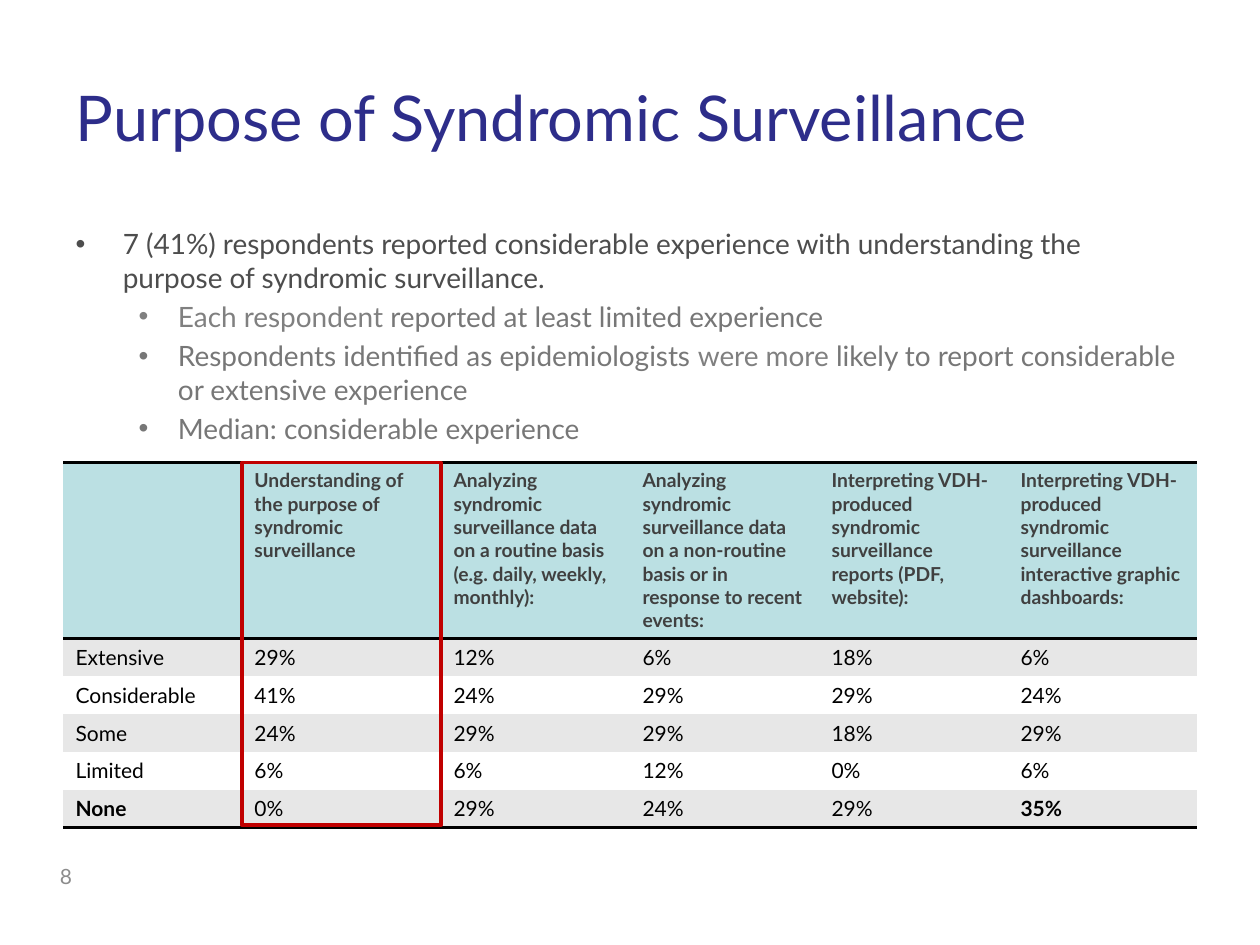
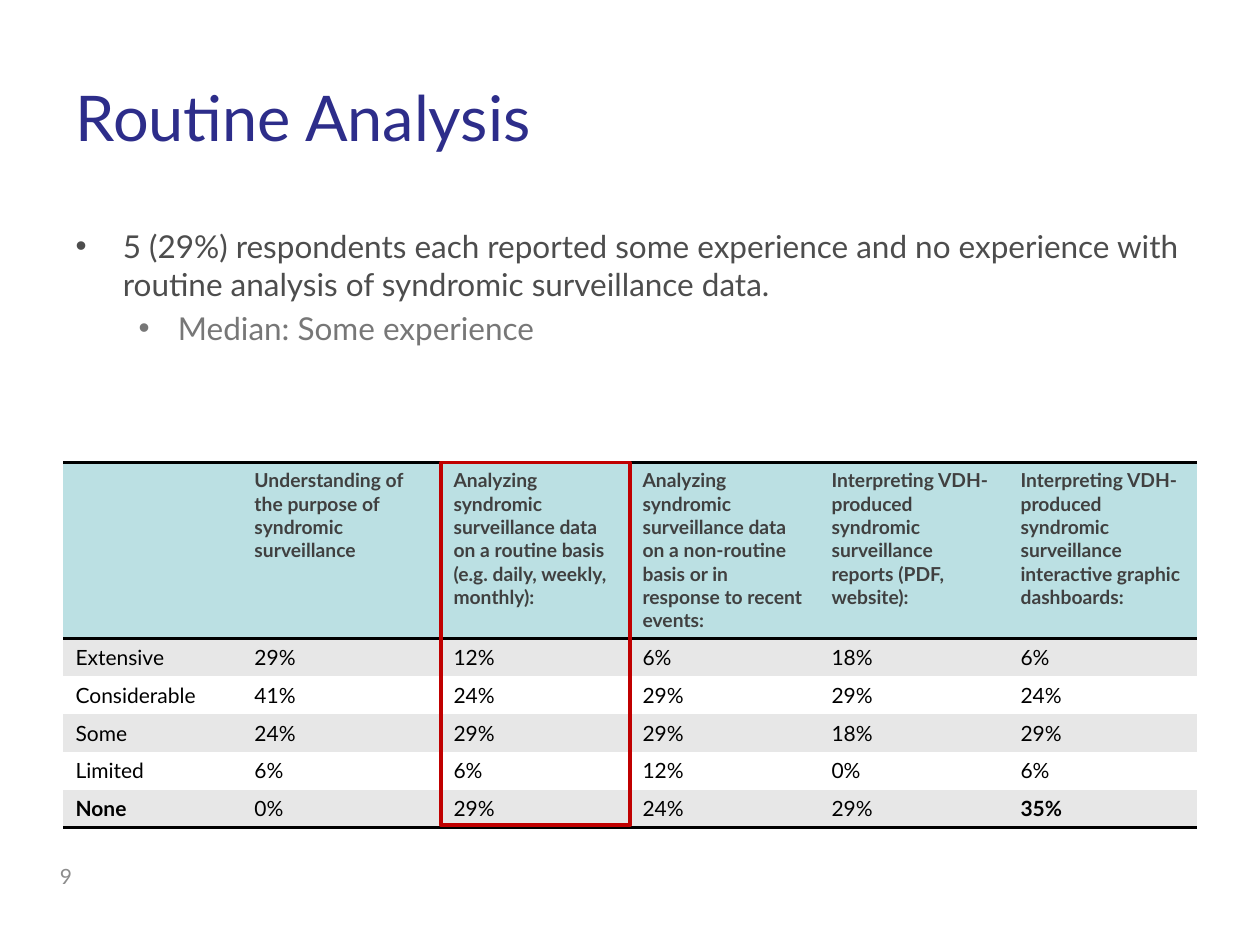
from dataclasses import dataclass
from typing import NamedTuple

from lxml.etree import SubElement
from pptx import Presentation
from pptx.dml.color import RGBColor
from pptx.enum.shapes import MSO_SHAPE as Shape
from pptx.enum.text import MSO_ANCHOR as Anchor, MSO_AUTO_SIZE as AutoSize, PP_ALIGN as Align
from pptx.oxml.ns import qn
from pptx.util import Emu, Pt

EMU_PER_PX = 9144  # 100 px to the inch
NO_GRID_STYLE = "{2D5ABB26-0587-4C30-8999-92F81FD0307C}"


@dataclass(frozen=True)
class Theme:
    font: str = "Lato"
    title: str = "2D2D8A"
    lead: str = "4D4D4D"
    detail: str = "777777"
    soft: str = "808080"
    header_text: str = "404040"
    header_fill: str = "BBE0E3"
    band: str = "E7E7E7"
    plain: str = "FFFFFF"
    rule: str = "000000"
    highlight: str = "C00000"
    number: str = "8C8C8C"
    title_size: int = 36
    header_size: int = 11
    cell_size: int = 12
    number_size: int = 12
    line_width: int = 2


class Box(NamedTuple):
    left: int
    top: int
    width: int
    height: int


THEME = Theme()
TITLE_BOX = Box(50, 30, 900, 125)
BODY_BOX = Box(50, 175, 900, 525)
TABLE_BOX = Box(50, 367, 900, 288)
NUMBER_BOX = Box(17, 675, 50, 40)

COLUMN_WIDTHS = [142, 158, 150, 150, 150, 150]
DATA_ROW_HEIGHT = 30
HEADERS = [
    "",
    "Understanding of the purpose of syndromic surveillance",
    "Analyzing syndromic surveillance data on a routine basis (e.g. daily, weekly, monthly):",
    "Analyzing syndromic surveillance data on a non-routine basis or in response to recent events:",
    "Interpreting VDH-produced syndromic surveillance reports (PDF, website):",
    "Interpreting VDH-produced syndromic surveillance interactive graphic dashboards:",
]
EXPERIENCE_ROWS = [
    ["Extensive", "29%", "12%", "6%", "18%", "6%"],
    ["Considerable", "41%", "24%", "29%", "29%", "24%"],
    ["Some", "24%", "29%", "29%", "18%", "29%"],
    ["Limited", "6%", "6%", "12%", "0%", "6%"],
    ["None", "0%", "29%", "24%", "29%", "35%"],
]
BOLD_CELLS = {"None", "35%"}

# Each bullet is (level, runs); each run is (text, colour).
SLIDES = [
    dict(
        number=8,
        title="Purpose of Syndromic Surveillance",
        body_size=16,
        highlighted_column=1,
        bullets=[
            (0, [("7 (41%) respondents reported considerable experience with understanding "
                  "the purpose of syndromic surveillance.", THEME.lead)]),
            (1, [("Each respondent ", THEME.soft),
                 ("reported at least limited experience", THEME.detail)]),
            (1, [("Respondents identified as epidemiologists ", THEME.detail),
                 ("were more ", THEME.soft),
                 ("likely to report considerable or extensive experience", THEME.detail)]),
            (1, [("Median: considerable experience", THEME.detail)]),
        ],
    ),
    dict(
        number=9,
        title="Routine Analysis",
        body_size=18,
        highlighted_column=2,
        bullets=[
            (0, [("5 (29%) respondents each reported some experience and no experience with "
                  "routine analysis of syndromic surveillance data.", THEME.lead)]),
            (1, [("Median: Some experience", THEME.detail)]),
        ],
    ),
]


def px(length):
    return Emu(length * EMU_PER_PX)


def to_emu(box):
    return [px(length) for length in box]


def place(shape, box):
    shape.left, shape.top, shape.width, shape.height = to_emu(box)


def add_run(paragraph, text, size, color, bold=False):
    run = paragraph.add_run()
    run.text = text
    run.font.name = THEME.font
    run.font.size = Pt(size)
    run.font.bold = bold
    run.font.color.rgb = RGBColor.from_string(color)


def add_title(slide, box, text):
    title = slide.shapes.title
    place(title, box)
    frame = title.text_frame
    frame.auto_size = AutoSize.NONE
    frame.vertical_anchor = Anchor.MIDDLE
    paragraph = frame.paragraphs[0]
    paragraph.alignment = Align.LEFT
    add_run(paragraph, text, THEME.title_size, THEME.title)


def set_bullet(paragraph, character):
    properties = paragraph._p.get_or_add_pPr()
    SubElement(properties, qn("a:buFont"), typeface="Arial")
    SubElement(properties, qn("a:buChar"), char=character)


def add_bullets(slide, box, bullets, size):
    body = slide.placeholders[1]
    place(body, box)
    frame = body.text_frame
    frame.auto_size = AutoSize.NONE
    for index, (level, runs) in enumerate(bullets):
        paragraph = frame.add_paragraph() if index else frame.paragraphs[0]
        paragraph.level = level
        set_bullet(paragraph, "•")
        if index == 0:
            paragraph.space_before = Pt(0)
        for text, color in runs:
            add_run(paragraph, text, size, color)


def add_rule(cell, side):
    """Draw one cell border; side is "T" or "B". Call before filling the cell."""
    line = SubElement(cell._tc.get_or_add_tcPr(), qn(f"a:ln{side}"), w=str(Pt(THEME.line_width)))
    fill = SubElement(line, qn("a:solidFill"))
    SubElement(fill, qn("a:srgbClr"), val=THEME.rule)


def format_cell(cell, text, size, color, fill, bold, rules):
    for side in rules:
        add_rule(cell, side)
    cell.fill.solid()
    cell.fill.fore_color.rgb = RGBColor.from_string(fill)
    if text:
        add_run(cell.text_frame.paragraphs[0], text, size, color, bold)


def add_experience_table(slide, box):
    row_count = len(EXPERIENCE_ROWS) + 1
    graphic_frame = slide.shapes.add_table(row_count, len(HEADERS), *to_emu(box))
    table = graphic_frame.table
    table.horz_banding = False
    next(graphic_frame.element.iter(qn("a:tableStyleId"))).text = NO_GRID_STYLE

    for column, width in zip(table.columns, COLUMN_WIDTHS):
        column.width = px(width)
    header_height = box.height - DATA_ROW_HEIGHT * len(EXPERIENCE_ROWS)
    for index, row in enumerate(table.rows):
        row.height = px(DATA_ROW_HEIGHT if index else header_height)

    for column, text in enumerate(HEADERS):
        format_cell(table.cell(0, column), text, THEME.header_size, THEME.header_text,
                    THEME.header_fill, True, "TB")
    for row, values in enumerate(EXPERIENCE_ROWS, start=1):
        fill = THEME.band if row % 2 else THEME.plain
        rules = "B" if row == row_count - 1 else ""
        for column, text in enumerate(values):
            format_cell(table.cell(row, column), text, THEME.cell_size, THEME.rule,
                        fill, text in BOLD_CELLS, rules)


def add_column_highlight(slide, box, column):
    """Outline one column of the table that fills the box."""
    left = box.left + sum(COLUMN_WIDTHS[:column])
    outline = Box(left, box.top, COLUMN_WIDTHS[column], box.height)
    shape = slide.shapes.add_shape(Shape.RECTANGLE, *to_emu(outline))
    shape.shadow.inherit = False
    shape.fill.background()
    shape.line.color.rgb = RGBColor.from_string(THEME.highlight)
    shape.line.width = Pt(THEME.line_width)


def add_slide_number(slide, box, number):
    frame = slide.shapes.add_textbox(*to_emu(box)).text_frame
    frame.word_wrap = True
    frame.vertical_anchor = Anchor.MIDDLE
    paragraph = frame.paragraphs[0]
    paragraph.alignment = Align.RIGHT
    add_run(paragraph, str(number), THEME.number_size, THEME.number)


def add_survey_slide(presentation, number, title, body_size, highlighted_column, bullets):
    slide = presentation.slides.add_slide(presentation.slide_layouts[1])
    add_title(slide, TITLE_BOX, title)
    add_bullets(slide, BODY_BOX, bullets, body_size)
    add_experience_table(slide, TABLE_BOX)
    add_column_highlight(slide, TABLE_BOX, highlighted_column)
    add_slide_number(slide, NUMBER_BOX, number)


def main():
    presentation = Presentation()
    presentation.slide_width, presentation.slide_height = px(1000), px(750)
    for content in SLIDES:
        add_survey_slide(presentation, **content)
    presentation.save("out.pptx")


if __name__ == "__main__":
    main()
